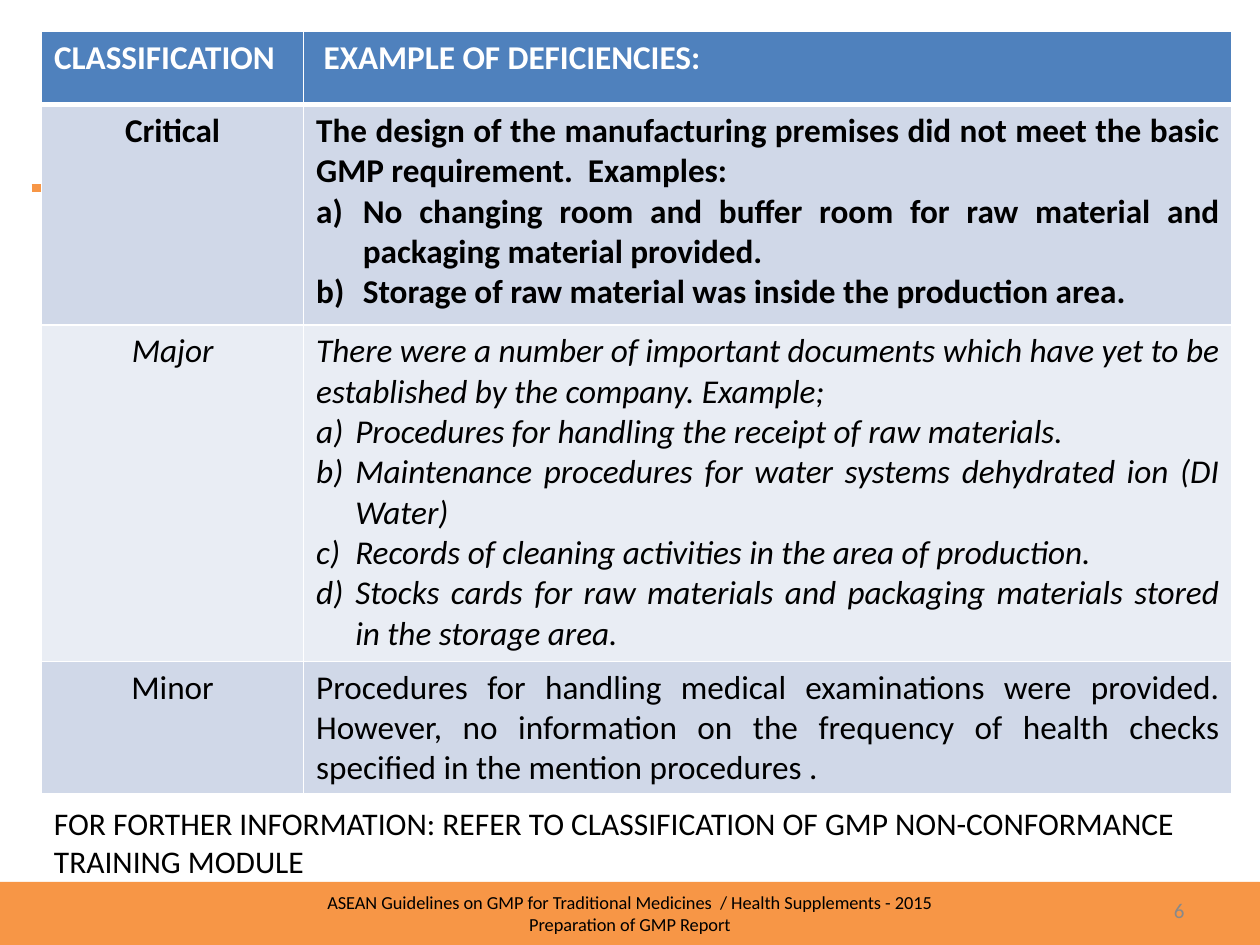
from lxml import etree
from pptx import Presentation
from pptx.dml.color import RGBColor
from pptx.enum.shapes import MSO_CONNECTOR, MSO_SHAPE
from pptx.enum.text import MSO_ANCHOR, PP_ALIGN
from pptx.oxml.ns import qn
from pptx.util import Inches, Pt

LEFT, MID, RIGHT, FULL = PP_ALIGN.LEFT, PP_ALIGN.CENTER, PP_ALIGN.RIGHT, PP_ALIGN.JUSTIFY
CENTER = MSO_ANCHOR.MIDDLE
RECT, LINE = MSO_SHAPE.RECTANGLE, MSO_CONNECTOR.STRAIGHT
ORANGE = RGBColor(0xF7, 0x96, 0x46)
BLUE = RGBColor(0x4F, 0x81, 0xBD)
BAND = RGBColor(0xD0, 0xD8, 0xE8)
PALE = RGBColor(0xE9, 0xED, 0xF4)
WHITE = RGBColor(0xFF, 0xFF, 0xFF)
BLACK = RGBColor(0, 0, 0)
GREY = RGBColor(0x89, 0x89, 0x89)


def write(frame, lines, size=19, color=BLACK, bold=False, italic=False, align=LEFT, hang=0):
    frame.word_wrap = True
    for i, line in enumerate(lines):
        para = frame.paragraphs[0] if i == 0 else frame.add_paragraph()
        para.alignment = align
        if hang and i:
            props = para._p.get_or_add_pPr()
            props.set("marL", str(Inches(hang)))
            props.set("indent", str(-Inches(hang)))
            etree.SubElement(props, qn("a:buFont"), typeface="+mj-lt")
            etree.SubElement(props, qn("a:buAutoNum"), type="alphaLcParenR")
        run = para.add_run()
        run.text = line
        font = run.font
        font.name, font.size, font.color.rgb = "Calibri", Pt(size), color
        font.bold, font.italic = bold, italic


def edge(cell, sides):
    props = cell._tc.get_or_add_tcPr()
    for i, (side, width) in enumerate(sides.items()):
        line = etree.Element(qn("a:ln" + side), w=str(Pt(width)))
        fill = etree.SubElement(line, qn("a:solidFill"))
        etree.SubElement(fill, qn("a:srgbClr"), val=str(WHITE))
        props.insert(i, line)


deck = Presentation()
deck.slide_width, deck.slide_height = Inches(10), Inches(7.5)
slide = deck.slides.add_slide(deck.slide_layouts[6])
shapes = slide.shapes

rule = shapes.add_connector(LINE, Inches(0.25), Inches(1.49), Inches(9.67), Inches(1.49))
rule.line.color.rgb, rule.line.width = ORANGE, Pt(4.5)
etree.SubElement(rule._element.spPr, qn("a:effectLst"))

foot = shapes.add_shape(RECT, 0, Inches(7), deck.slide_width, Inches(0.5))
foot.shadow.inherit = False
foot.fill.solid()
foot.fill.fore_color.rgb = ORANGE
foot.line.fill.background()
foot.text_frame.vertical_anchor = CENTER
write(foot.text_frame, [
    "ASEAN Guidelines on GMP for Traditional Medicines  / Health Supplements - 2015",
    "Preparation of GMP Report",
], size=10.5, align=MID)

page = shapes.add_textbox(Inches(7.17), Inches(7.02), Inches(2.33), Inches(0.4))
page.text_frame.vertical_anchor = CENTER
write(page.text_frame, ["6"], size=12, color=GREY, align=RIGHT)

rows = [
    (0.58, BLUE, "CLASSIFICATION", [" EXAMPLE OF DEFICIENCIES:"],
     dict(color=WHITE, bold=True), 0),
    (1.75, BAND, "Critical", [
        "The design of the manufacturing premises did not meet the basic "
        "GMP requirement.  Examples:",
        "No changing room and buffer room for raw material and packaging material provided.",
        "Storage of raw material was inside the production area.",
    ], dict(bold=True), 0.37),
    (2.67, PALE, "Major", [
        "There were a number of important documents which have yet to be "
        "established by the company. Example;",
        "Procedures for handling the receipt of raw materials.",
        "Maintenance procedures for water systems dehydrated ion (DI Water)",
        "Records of cleaning activities in the area of production.",
        "Stocks cards for raw materials and packaging materials stored in the storage area.",
    ], dict(italic=True), 0.31),
    (1.05, BAND, "Minor", [
        "Procedures for handling medical examinations were provided. However, no information "
        "on the frequency of health checks specified in the mention procedures .",
    ], {}, 0),
]
grid = shapes.add_table(len(rows), 2, Inches(0.33), Inches(0.25), Inches(9.45), Inches(6.05)).table
for col, width in zip(grid.columns, (2.08, 7.37)):
    col.width = Inches(width)
for r, (height, fill, name, lines, style, hang) in enumerate(rows):
    grid.rows[r].height = Inches(height)
    first, last = grid.cell(r, 0), grid.cell(r, 1)
    for cell in (first, last):
        cell.fill.solid()
        cell.fill.fore_color.rgb = fill
        edge(cell, {"L": 1, "R": 1, "T": 3 if r == 1 else 1, "B": 3 if r == 0 else 1})
    write(first.text_frame, [name], align=MID if r else LEFT, **style)
    write(last.text_frame, lines, align=FULL if r else LEFT, hang=hang, **style)

note = shapes.add_textbox(Inches(0.33), Inches(6.33), Inches(9.5), Inches(0.71))
write(note.text_frame, [
    "FOR FORTHER INFORMATION: REFER TO CLASSIFICATION OF GMP NON-CONFORMANCE  TRAINING MODULE",
], size=18)

deck.save("out.pptx")
